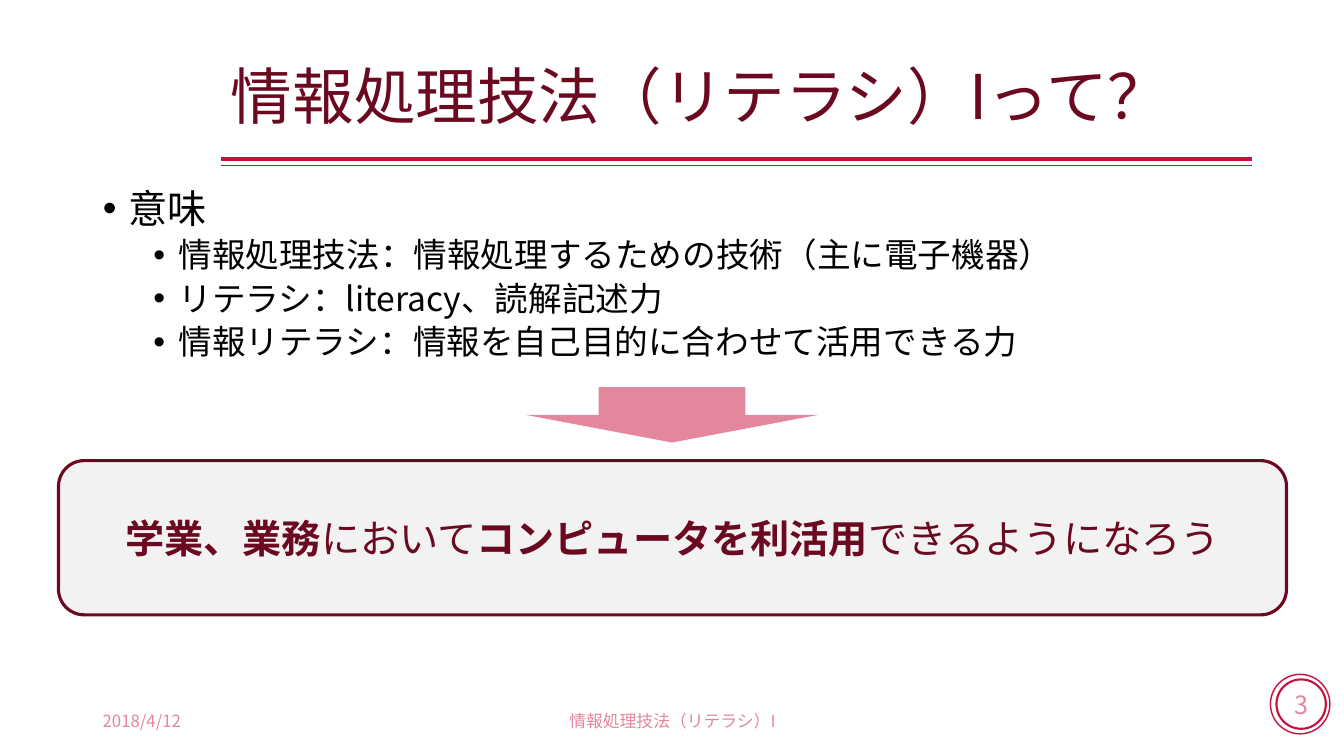
from lxml.etree import SubElement
from pptx import Presentation
from pptx.dml.color import RGBColor
from pptx.enum.shapes import MSO_CONNECTOR, MSO_SHAPE
from pptx.enum.text import MSO_ANCHOR, MSO_AUTO_SIZE, PP_ALIGN
from pptx.oxml.ns import qn
from pptx.util import Inches, Pt

FONT = "Noto Sans CJK JP"
CRIMSON = "C8103D"
MAROON = "6B0920"


def style(para, size, color, align=PP_ALIGN.LEFT):
    para.alignment = align
    para.font.size = Pt(size)
    para.font.name = FONT
    para.font.color.rgb = RGBColor.from_string(color)
    latin = next(para._p.iter(qn("a:latin")))
    east_asian = SubElement(latin.getparent(), qn("a:ea"), typeface=FONT)
    latin.addnext(east_asian)


def fade(element):
    for color in element.iter(qn("a:srgbClr")):
        SubElement(color, qn("a:alpha"), val="50000")


deck = Presentation()
deck.slide_width = Inches(13.33)
deck.slide_height = Inches(7.5)
page = deck.slides.add_slide(deck.slide_layouts[1])
shapes = page.shapes

for left, top, size, width in [(12.6, 6.69, 0.59, 1), (12.66, 6.74, 0.49, 1.5)]:
    ring = shapes.add_shape(MSO_SHAPE.OVAL, Inches(left), Inches(top), Inches(size), Inches(size))
    ring.shadow.inherit = False
    ring.fill.background()
    ring.line.color.rgb = RGBColor.from_string(CRIMSON)
    ring.line.width = Pt(width)

ring.text_frame.word_wrap = False
ring.text_frame.vertical_anchor = MSO_ANCHOR.MIDDLE
number = ring.text_frame.paragraphs[0]
number.text = "3"
style(number, 18, CRIMSON, PP_ALIGN.CENTER)
fade(number._p)

for top, width in [(1.58, 3), (1.64, 1)]:
    rule = shapes.add_connector(MSO_CONNECTOR.STRAIGHT, Inches(2.19), Inches(top), Inches(12.42), Inches(top))
    rule.line.color.rgb = RGBColor.from_string(CRIMSON)
    rule.line.width = Pt(width)
    SubElement(rule._element.spPr, qn("a:effectLst"))

title = shapes.title
title.left, title.top, title.width, title.height = map(Inches, (2.19, 0.4, 10.23, 1.17))
title.text_frame.auto_size = MSO_AUTO_SIZE.NONE
title.text_frame.vertical_anchor = MSO_ANCHOR.MIDDLE
heading = title.text_frame.paragraphs[0]
heading.text = "情報処理技法（リテラシ）Iって？"
heading.line_spacing = 0.9
style(heading, 44, MAROON)

body = page.placeholders[1]
body.left, body.top, body.width, body.height = map(Inches, (0.92, 1.83, 11.5, 4.93))
body.text_frame.auto_size = MSO_AUTO_SIZE.NONE
items = [
    (0, "意味"),
    (1, "情報処理技法：情報処理するための技術（主に電子機器）"),
    (1, "リテラシ：literacy、読解記述力"),
    (1, "情報リテラシ：情報を自己目的に合わせて活用できる力"),
]
body.text_frame.text = "\n".join(text for level, text in items)
for para, (level, text) in zip(body.text_frame.paragraphs, items):
    para.level = level
    para.line_spacing = 0.9
    para.space_before = Pt(5 * level)
    properties = para._p.get_or_add_pPr()
    properties.set("marL", str(Inches(0.25 + 0.5 * level)))
    properties.set("indent", str(Inches(-0.25)))
    SubElement(properties, qn("a:buFont"), typeface="Arial")
    SubElement(properties, qn("a:buChar"), char="•")
    style(para, 28 - 4 * level, "000000")

footers = [
    (0.92, 3, "2018/4/12", PP_ALIGN.LEFT),
    (4.42, 4.5, "情報処理技法（リテラシ）I", PP_ALIGN.CENTER),
]
for left, width, text, align in footers:
    box = shapes.add_textbox(Inches(left), Inches(6.95), Inches(width), Inches(0.4))
    box.text_frame.word_wrap = True
    box.text_frame.vertical_anchor = MSO_ANCHOR.MIDDLE
    para = box.text_frame.paragraphs[0]
    para.text = text
    style(para, 12, CRIMSON, align)
    fade(para._p)

arrow = shapes.add_shape(MSO_SHAPE.DOWN_ARROW, Inches(5.21), Inches(3.84), Inches(2.91), Inches(0.55))
arrow.shadow.inherit = False
arrow.fill.solid()
arrow.fill.fore_color.rgb = RGBColor.from_string(CRIMSON)
arrow.line.fill.background()
fade(arrow._element.spPr)

goal = shapes.add_shape(MSO_SHAPE.ROUNDED_RECTANGLE, Inches(0.58), Inches(4.57), Inches(12.18), Inches(1.53))
goal.shadow.inherit = False
goal.fill.solid()
goal.fill.fore_color.rgb = RGBColor.from_string("F2F2F2")
goal.line.color.rgb = RGBColor.from_string(MAROON)
goal.line.width = Pt(2.25)
goal.text_frame.word_wrap = True
goal.text_frame.vertical_anchor = MSO_ANCHOR.MIDDLE
message = goal.text_frame.paragraphs[0]
style(message, 28, MAROON, PP_ALIGN.CENTER)
for text, bold in [("学業、業務", True), ("において", False), ("コンピュータを利活用", True), ("できるようになろう", False)]:
    span = message.add_run()
    span.text = text
    span.font.bold = bold

deck.save("out.pptx")
